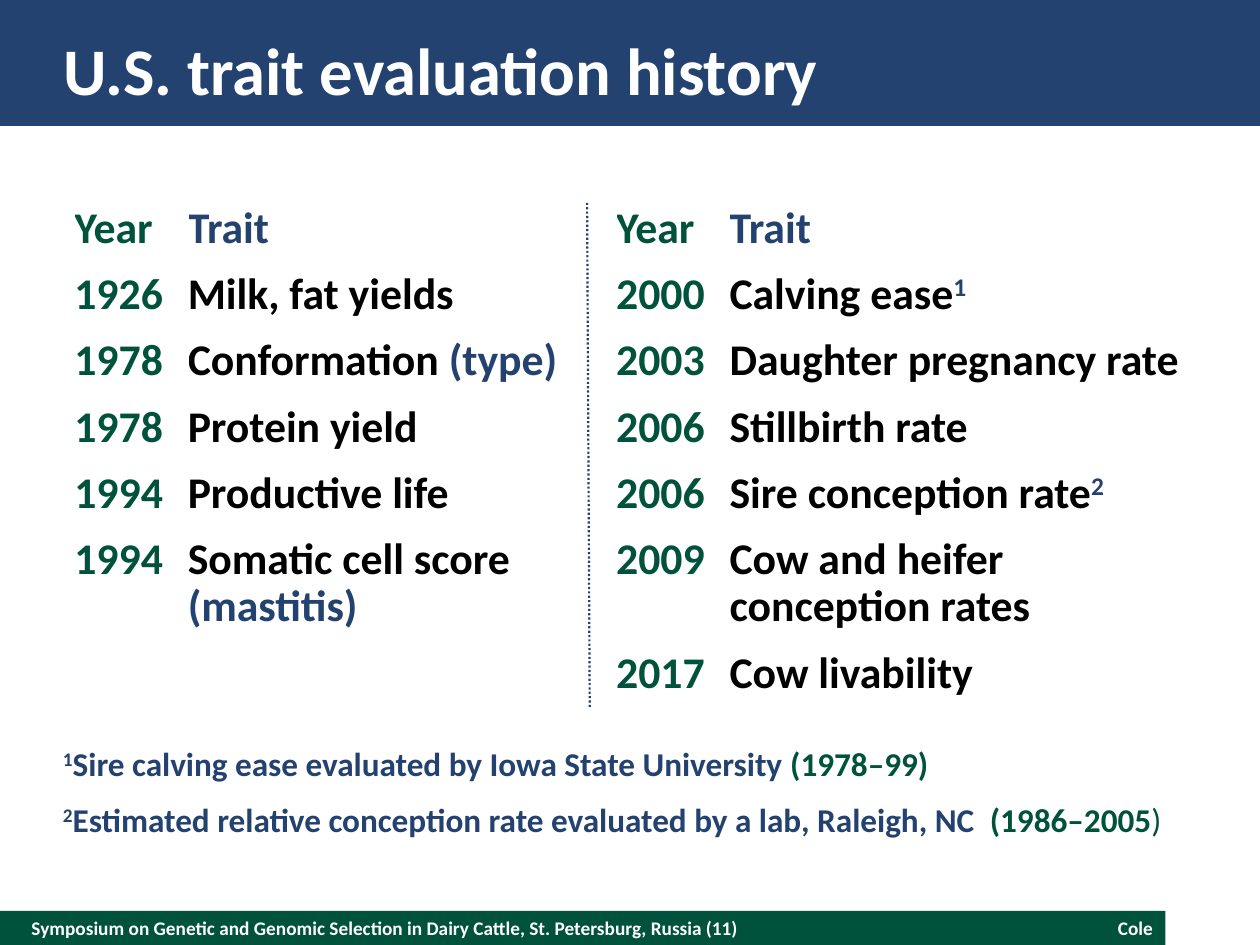
from lxml import etree
from pptx import Presentation
from pptx.dml.color import RGBColor
from pptx.enum.dml import MSO_LINE
from pptx.enum.shapes import MSO_CONNECTOR, MSO_SHAPE
from pptx.enum.text import MSO_ANCHOR, PP_ALIGN
from pptx.oxml.ns import qn
from pptx.util import Pt

FONT = "Calibri"
GREEN, BLUE, BLACK, WHITE = "00523C", "244270", "000000", "FFFFFF"
LEFT, RIGHT = PP_ALIGN.LEFT, PP_ALIGN.RIGHT
MIDDLE, TOP = MSO_ANCHOR.MIDDLE, MSO_ANCHOR.TOP
RECT, STRAIGHT, DOTS = MSO_SHAPE.RECTANGLE, MSO_CONNECTOR.STRAIGHT, MSO_LINE.ROUND_DOT

ROW_HEIGHT, LINE_HEIGHT, CELL_GAP = 37.8, 27, 10.8
COLUMN_WIDTHS = [64.8, 244.8, 64.8, 259.2]
HEADER = ("Year", [[("Trait", BLUE)]])
EARLY_TRAITS = [
    HEADER,
    ("1926", [[("Milk, fat yields", BLACK)]]),
    ("1978", [[("Conformation ", BLACK), ("(type)", BLUE)]]),
    ("1978", [[("Protein yield", BLACK)]]),
    ("1994", [[("Productive life", BLACK)]]),
    ("1994", [[("Somatic cell score", BLACK)], [("(mastitis)", BLUE)]]),
]
RECENT_TRAITS = [
    HEADER,
    ("2000", [[("Calving ease", BLACK), ("1", BLUE, "super")]]),
    ("2003", [[("Daughter pregnancy rate", BLACK)]]),
    ("2006", [[("Stillbirth rate", BLACK)]]),
    ("2006", [[("Sire conception rate", BLACK), ("2", BLUE, "super")]]),
    ("2009", [[("Cow and heifer conception rates", BLACK)]]),
    ("2017", [[("Cow livability", BLACK)]]),
]
FOOTNOTES = [
    [("1", BLUE, "super"),
     ("Sire calving ease evaluated by Iowa State University ", BLUE),
     ("(1978–99)", GREEN)],
    [("2", BLUE, "super"),
     ("Estimated relative conception rate evaluated by a lab, Raleigh, NC  ", BLUE),
     ("(1986–2005", GREEN), (")", GREEN, "light")],
]


def rgb(value):
    """Return the colour for a hex string."""
    return RGBColor.from_string(value)


def add_runs(p, runs, size):
    """Add styled runs, each a text, a colour and an optional variant."""
    for text, color, *variant in runs:
        r = p.add_run()
        r.text = text
        r.font.name, r.font.size = FONT, Pt(size)
        r.font.bold = "light" not in variant
        r.font.color.rgb = rgb(color)
        if "super" in variant:
            r.font._element.set("baseline", "30000")


def fill_text(tf, paragraphs, size, spacing=None, gap=0, align=LEFT):
    """Write paragraphs of runs into a text frame."""
    for i, runs in enumerate(paragraphs):
        p = tf.add_paragraph() if i else tf.paragraphs[0]
        p.alignment = align
        if spacing:
            p.line_spacing = Pt(spacing)
        if i and gap:
            p.space_before = Pt(gap)
        add_runs(p, runs, size)


def setup_frame(tf, anchor):
    """Give a text frame no margins, wrapping and an anchor."""
    tf.margin_left = tf.margin_right = tf.margin_top = tf.margin_bottom = 0
    tf.word_wrap = True
    tf.vertical_anchor = anchor


def add_text(s, box, paragraphs, size, anchor=TOP, **style):
    """Add a text box without margins."""
    tf = s.shapes.add_textbox(*map(Pt, box)).text_frame
    setup_frame(tf, anchor)
    fill_text(tf, paragraphs, size, **style)


def add_band(s, box, color):
    """Add a plain coloured band."""
    sp = s.shapes.add_shape(RECT, *map(Pt, box))
    sp.shadow.inherit = False
    sp.fill.solid()
    sp.fill.fore_color.rgb = rgb(color)
    sp.line.fill.background()


def add_title(s, box, text):
    """Add the title band and place the title placeholder on it."""
    x, y, w, h = box
    add_band(s, box, BLUE)
    title = s.shapes.title
    title.left, title.top = Pt(x + 36), Pt(y + 14.4)
    title.width, title.height = Pt(w - 72), Pt(h - 21.6)
    setup_frame(title.text_frame, MIDDLE)
    fill_text(title.text_frame, [[(text, WHITE)]], 38)
    s.shapes._spTree.append(title._element)


def add_footer(s, box, event, speaker):
    """Add the footer band with the event and the speaker."""
    x, y, w, h = box
    add_band(s, box, GREEN)
    add_text(s, (x + 18, y, 468, h), [[(event, WHITE)]], 11, MIDDLE)
    add_text(s, (x + w - 151.2, y, 144, h), [[(speaker, WHITE)]], 11, MIDDLE, align=RIGHT)


def add_trait_table(s, box):
    """Add the two year and trait lists side by side in one table."""
    rows = len(RECENT_TRAITS)
    table = s.shapes.add_table(rows, len(COLUMN_WIDTHS), *map(Pt, box)).table
    table.first_row = table.horz_banding = False
    for column, width in zip(table.columns, COLUMN_WIDTHS):
        column.width = Pt(width)
    for row in table.rows:
        row.height = Pt(ROW_HEIGHT)
    table.rows[5].height = Pt(ROW_HEIGHT + LINE_HEIGHT)
    for cell in table.iter_cells():
        cell.fill.background()
        cell.margin_left = cell.margin_right = cell.margin_top = 0
        cell.margin_bottom = Pt(CELL_GAP)
    for col, traits in ((0, EARLY_TRAITS), (2, RECENT_TRAITS)):
        for row, (year, trait) in enumerate(traits):
            for offset, content in enumerate(([[(year, GREEN)]], trait)):
                tf = table.cell(row, col + offset).text_frame
                fill_text(tf, content, 25, LINE_HEIGHT)


def add_divider(s, box):
    """Add the dotted line between the two lists."""
    x, y, w, h = box
    line = s.shapes.add_connector(STRAIGHT, Pt(x), Pt(y), Pt(x + w), Pt(y + h))
    line.line.color.rgb = rgb(BLUE)
    line.line.width = Pt(1.25)
    line.line.dash_style = DOTS
    etree.SubElement(line._element.spPr, qn("a:effectLst"))


def main():
    """Build and save the slide."""
    prs = Presentation()
    prs.slide_width, prs.slide_height = Pt(720), Pt(540)
    s = prs.slides.add_slide(prs.slide_layouts[5])
    add_footer(
        s, (0, 520.5, 666, 19.5),
        "Symposium on Genetic and Genomic Selection in Dairy Cattle, "
        "St. Petersburg, Russia (11)", "Cole")
    add_title(s, (0, 0, 720, 72), "U.S. trait evaluation history")
    add_trait_table(s, (42.5, 118.8, sum(COLUMN_WIDTHS), 291.6))
    add_text(s, (36, 427.7, 645.8, 52.6), FOOTNOTES, 19, spacing=20, gap=12)
    add_divider(s, (335.5, 115.9, 1.5, 288))
    prs.save("out.pptx")


if __name__ == "__main__":
    main()
